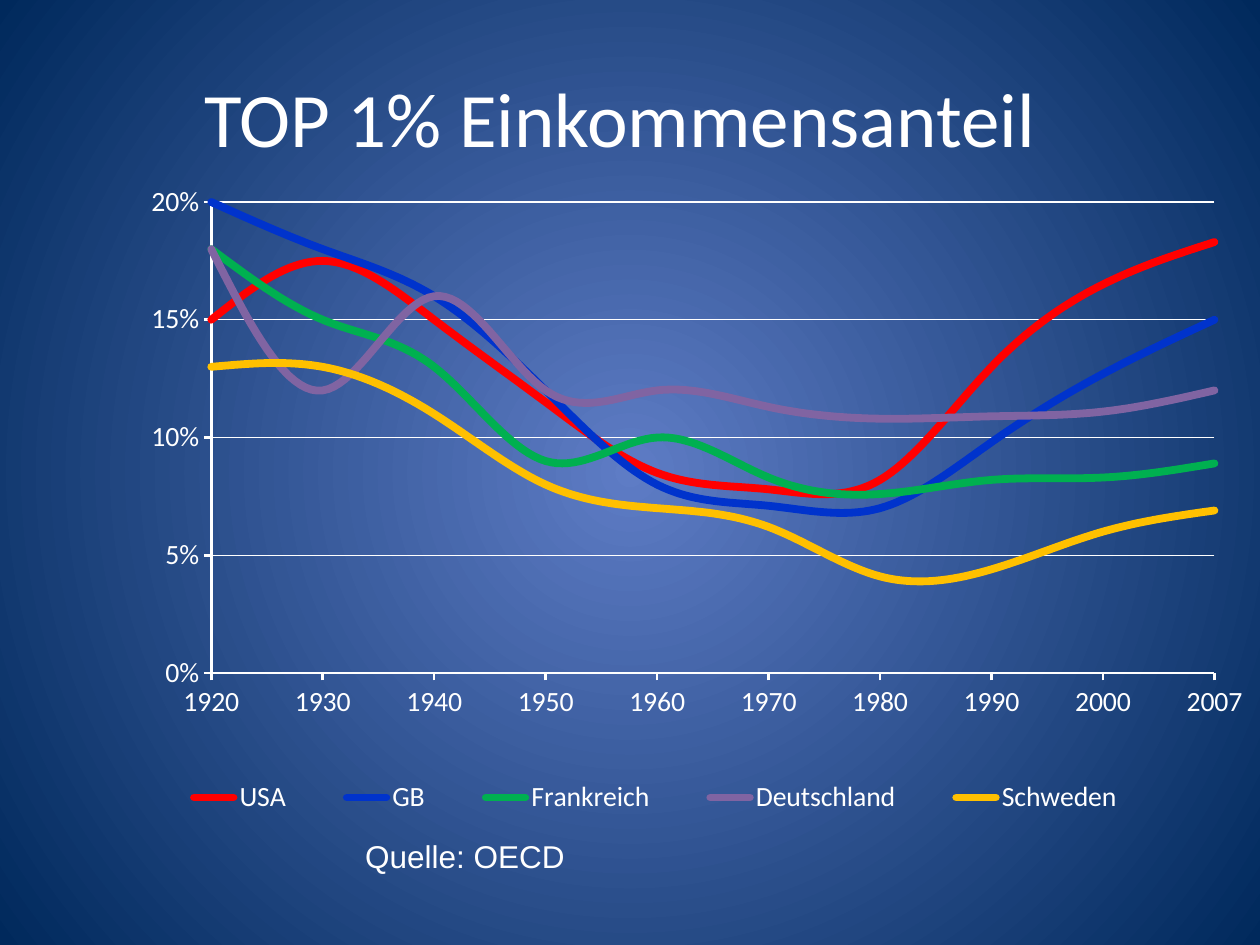
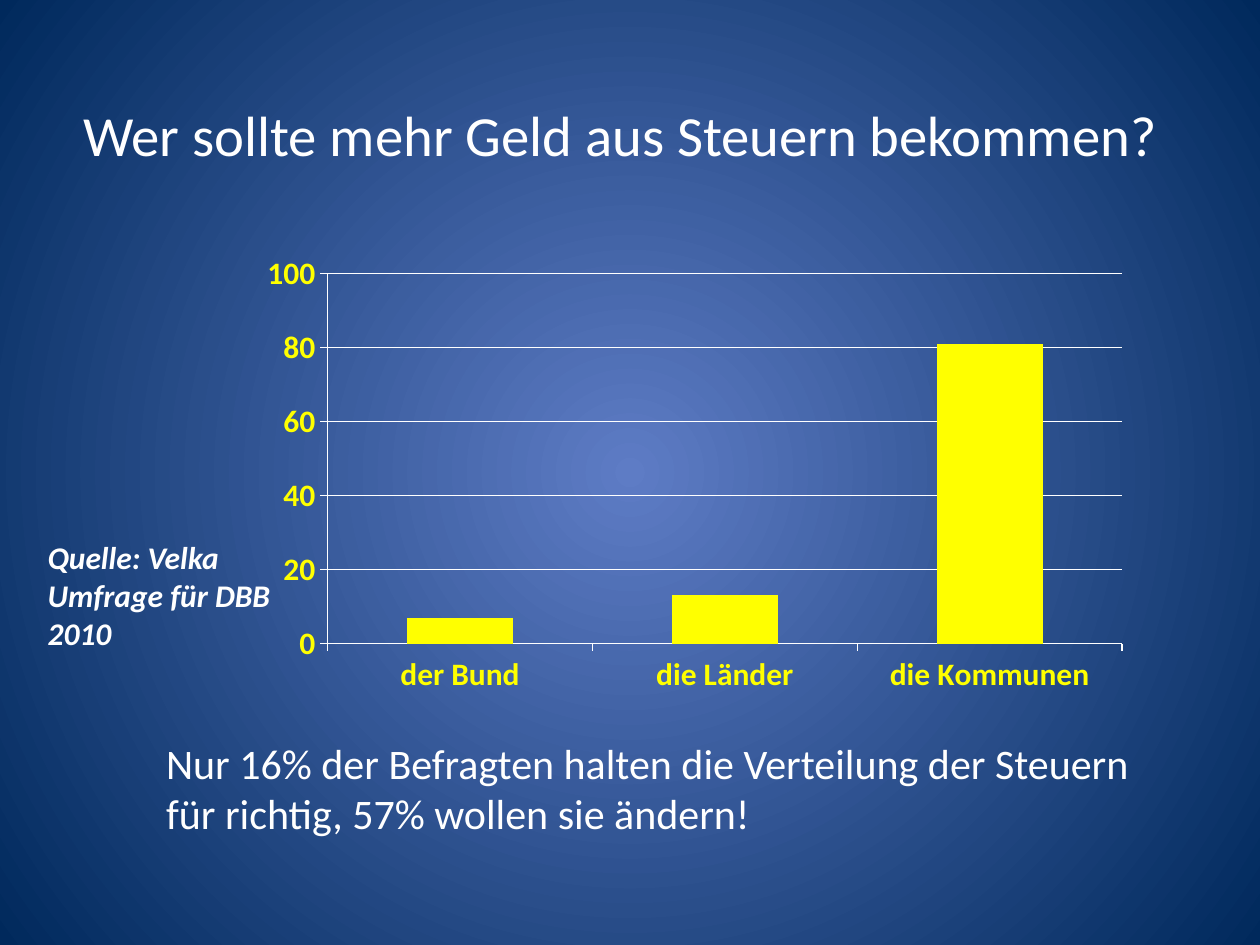
"""Build two slides on income shares and the distribution of tax revenue."""
from dataclasses import dataclass
from typing import Optional

from lxml import etree
from pptx import Presentation
from pptx.chart.axis import CategoryAxis, ValueAxis
from pptx.chart.chart import Chart
from pptx.chart.data import CategoryChartData
from pptx.dml.color import RGBColor
from pptx.dml.line import LineFormat
from pptx.enum.chart import XL_CHART_TYPE as ChartType
from pptx.enum.chart import XL_LEGEND_POSITION as LegendPosition
from pptx.enum.chart import XL_TICK_MARK as TickMark
from pptx.enum.text import MSO_ANCHOR as Anchor
from pptx.enum.text import PP_ALIGN as Align
from pptx.oxml.ns import qn
from pptx.slide import Slide
from pptx.text.text import Font
from pptx.util import Pt

COLORS = {
    "glow": "5E7CC5",
    "navy": "00295C",
    "white": "FFFFFF",
    "yellow": "FFFF00",
    "usa": "FF0000",
    "gb": "0033CC",
    "frankreich": "00B050",
    "deutschland": "8064A2",
    "schweden": "FFC000",
}
BODY_FONT = "Calibri"


@dataclass(frozen=True)
class Box:
    left: float
    top: float
    width: float
    height: float

    def lengths(self) -> tuple[Pt, Pt, Pt, Pt]:
        return Pt(self.left), Pt(self.top), Pt(self.width), Pt(self.height)


@dataclass(frozen=True)
class Label:
    text: str
    box: Box
    size: float
    font: str = BODY_FONT
    bold: bool = False
    italic: bool = False
    align: Align = Align.LEFT
    anchor: Anchor = Anchor.TOP


@dataclass(frozen=True)
class Series:
    name: str
    values: tuple[float, ...]
    color: str


@dataclass(frozen=True)
class ChartPlan:
    kind: ChartType
    box: Box
    plot_area: Box
    categories: tuple[str, ...]
    series: tuple[Series, ...]
    font_size: float
    text_color: str
    bold: bool
    maximum: float
    major_unit: float
    number_format: str
    axis_width: float
    crossing: str
    legend_area: Optional[Box] = None


INCOME_CHART = ChartPlan(
    kind=ChartType.LINE,
    box=Box(48.24, 100.08, 661.68, 384.48),
    plot_area=Box(0.11, 0.04, 0.87, 0.7),
    categories=(*(str(year) for year in range(1920, 2001, 10)), "2007"),
    series=(
        Series("USA", (0.15, 0.175, 0.15, 0.115, 0.085, 0.078, 0.082, 0.13, 0.165, 0.183), "usa"),
        Series("GB", (0.2, 0.18, 0.16, 0.12, 0.08, 0.071, 0.07, 0.098, 0.127, 0.15), "gb"),
        Series("Frankreich", (0.18, 0.15, 0.13, 0.09, 0.1, 0.083, 0.076, 0.082, 0.083, 0.089),
               "frankreich"),
        Series("Deutschland", (0.18, 0.12, 0.16, 0.12, 0.12, 0.113, 0.108, 0.109, 0.111, 0.12),
               "deutschland"),
        Series("Schweden", (0.13, 0.13, 0.11, 0.08, 0.07, 0.062, 0.041, 0.044, 0.06, 0.069),
               "schweden"),
    ),
    font_size=15.9,
    text_color="white",
    bold=False,
    maximum=0.2,
    major_unit=0.05,
    number_format="0%",
    axis_width=1.5,
    crossing="midCat",
    legend_area=Box(0.05, 0.88, 0.89, 0.09),
)

TAX_CHART = ChartPlan(
    kind=ChartType.COLUMN_CLUSTERED,
    box=Box(150.48, 145.44, 491.04, 260.64),
    plot_area=Box(0.075, 0.033, 0.925, 0.819),
    categories=("der Bund", "die Länder", "die Kommunen"),
    series=(Series("Series 1", (7, 13, 81), "yellow"),),
    font_size=18,
    text_color="yellow",
    bold=True,
    maximum=100,
    major_unit=20,
    number_format="General",
    axis_width=0.75,
    crossing="between",
)


def rgb(name: str) -> RGBColor:
    return RGBColor.from_string(COLORS[name])


def style_font(font: Font, size: float, color: str, name: str = BODY_FONT,
               bold: bool = False, italic: bool = False) -> None:
    font.name, font.size, font.bold, font.italic = name, Pt(size), bold, italic
    font.color.rgb = rgb(color)


def style_line(line: LineFormat, color: str, width: float) -> None:
    line.color.rgb = rgb(color)
    line.width = Pt(width)


def set_background(slide: Slide) -> None:
    fill = slide.background.fill
    fill.gradient()
    for stop, color, position in zip(fill.gradient_stops, ("glow", "navy"), (0, 1)):
        stop.color.rgb = rgb(color)
        stop.position = position
    for gradient in slide.element.iter(qn("a:gradFill")):
        for linear in gradient.findall(qn("a:lin")):
            gradient.remove(linear)
        circle = etree.SubElement(gradient, qn("a:path"), path="circle")
        etree.SubElement(circle, qn("a:fillToRect"), dict.fromkeys("ltrb", "50000"))


def add_label(slide: Slide, label: Label) -> None:
    frame = slide.shapes.add_textbox(*label.box.lengths()).text_frame
    frame.word_wrap = True
    frame.vertical_anchor = label.anchor
    paragraph = frame.paragraphs[0]
    paragraph.text = label.text
    paragraph.alignment = label.align
    style_font(paragraph.font, label.size, "white", label.font, label.bold, label.italic)


def add_title(slide: Slide, text: str, top: float, size: float) -> None:
    add_label(slide, Label(text, Box(30.5, top, 648, 90), size,
                           align=Align.CENTER, anchor=Anchor.MIDDLE))


def set_layout(parent: etree._Element, area: Box, index: int, inner: bool = False) -> None:
    for layout in parent.findall(qn("c:layout")):
        parent.remove(layout)
    layout = etree.Element(qn("c:layout"))
    parent.insert(index, layout)
    manual = etree.SubElement(layout, qn("c:manualLayout"))
    settings = [("layoutTarget", "inner")] if inner else []
    settings += [("xMode", "edge"), ("yMode", "edge"), ("x", area.left), ("y", area.top),
                 ("w", area.width), ("h", area.height)]
    for tag, value in settings:
        etree.SubElement(manual, qn(f"c:{tag}"), val=str(value))


def set_crossing(value_axis: etree._Element, crossing: str) -> None:
    for previous in value_axis.findall(qn("c:crossBetween")):
        value_axis.remove(previous)
    element = etree.Element(qn("c:crossBetween"), val=crossing)
    value_axis.find(qn("c:crosses")).addnext(element)


def style_axis(axis: CategoryAxis | ValueAxis, plan: ChartPlan) -> None:
    axis.major_tick_mark = TickMark.OUTSIDE
    axis.minor_tick_mark = TickMark.NONE
    style_line(axis.format.line, "white", plan.axis_width)
    style_font(axis.tick_labels.font, plan.font_size, plan.text_color, bold=plan.bold)


def style_value_axis(axis: ValueAxis, plan: ChartPlan) -> None:
    axis.minimum_scale, axis.maximum_scale = 0, plan.maximum
    axis.major_unit = plan.major_unit
    axis.has_major_gridlines = True
    style_line(axis.major_gridlines.format.line, "white", 0.75)
    axis.tick_labels.number_format = plan.number_format
    axis.tick_labels.number_format_is_linked = False


def style_series(chart: Chart, plan: ChartPlan) -> None:
    for series, entry in zip(chart.plots[0].series, plan.series):
        if plan.kind == ChartType.LINE:
            series.smooth = True
            style_line(series.format.line, entry.color, 4.48)
        else:
            series.format.fill.solid()
            series.format.fill.fore_color.rgb = rgb(entry.color)
    for series_element in chart.element.iter(qn("c:ser")):
        for line in series_element.iter(qn("a:ln")):
            line.set("cap", "rnd")


def add_plan(slide: Slide, plan: ChartPlan) -> None:
    data = CategoryChartData(number_format=plan.number_format)
    data.categories = plan.categories
    for entry in plan.series:
        data.add_series(entry.name, entry.values)
    chart = slide.shapes.add_chart(plan.kind, *plan.box.lengths(), data).chart
    chart.has_title = False
    style_font(chart.font, plan.font_size, plan.text_color, bold=plan.bold)
    plot = chart.plots[0]
    plot.vary_by_categories = False
    style_axis(chart.category_axis, plan)
    style_axis(chart.value_axis, plan)
    style_value_axis(chart.value_axis, plan)
    style_series(chart, plan)
    for plot_area in chart.element.iter(qn("c:plotArea")):
        set_layout(plot_area, plan.plot_area, 0, inner=True)
        set_crossing(plot_area.find(qn("c:valAx")), plan.crossing)
    if plan.kind == ChartType.COLUMN_CLUSTERED:
        plot.gap_width = 150
    chart.has_legend = plan.legend_area is not None
    if plan.legend_area:
        chart.legend.position = LegendPosition.BOTTOM
        chart.legend.include_in_layout = False
        for legend in chart.element.iter(qn("c:legend")):
            set_layout(legend, plan.legend_area, 1)


def main() -> None:
    presentation = Presentation()
    presentation.slide_width, presentation.slide_height = Pt(720), Pt(540)
    blank = presentation.slide_layouts[6]

    income_slide = presentation.slides.add_slide(blank)
    set_background(income_slide)
    add_title(income_slide, "TOP 1% Einkommensanteil", 21.6, 44)
    add_plan(income_slide, INCOME_CHART)
    add_label(income_slide, Label("Quelle: OECD", Box(201.6, 474.48, 244.08, 28.8), 18, "Arial"))

    tax_slide = presentation.slides.add_slide(blank)
    set_background(tax_slide)
    add_title(tax_slide, "Wer sollte mehr Geld aus Steuern bekommen?", 31.68, 32.4)
    add_plan(tax_slide, TAX_CHART)
    add_label(tax_slide, Label("Quelle: Velka Umfrage für DBB 2010",
                               Box(20.16, 303.84, 153.36, 72.72), 18, bold=True, italic=True))
    add_label(tax_slide, Label("Nur 16% der Befragten halten die Verteilung der Steuern "
                               "für richtig, 57% wollen sie ändern!",
                               Box(87.84, 417.6, 568.8, 65.52), 24))

    presentation.save("out.pptx")


if __name__ == "__main__":
    main()
